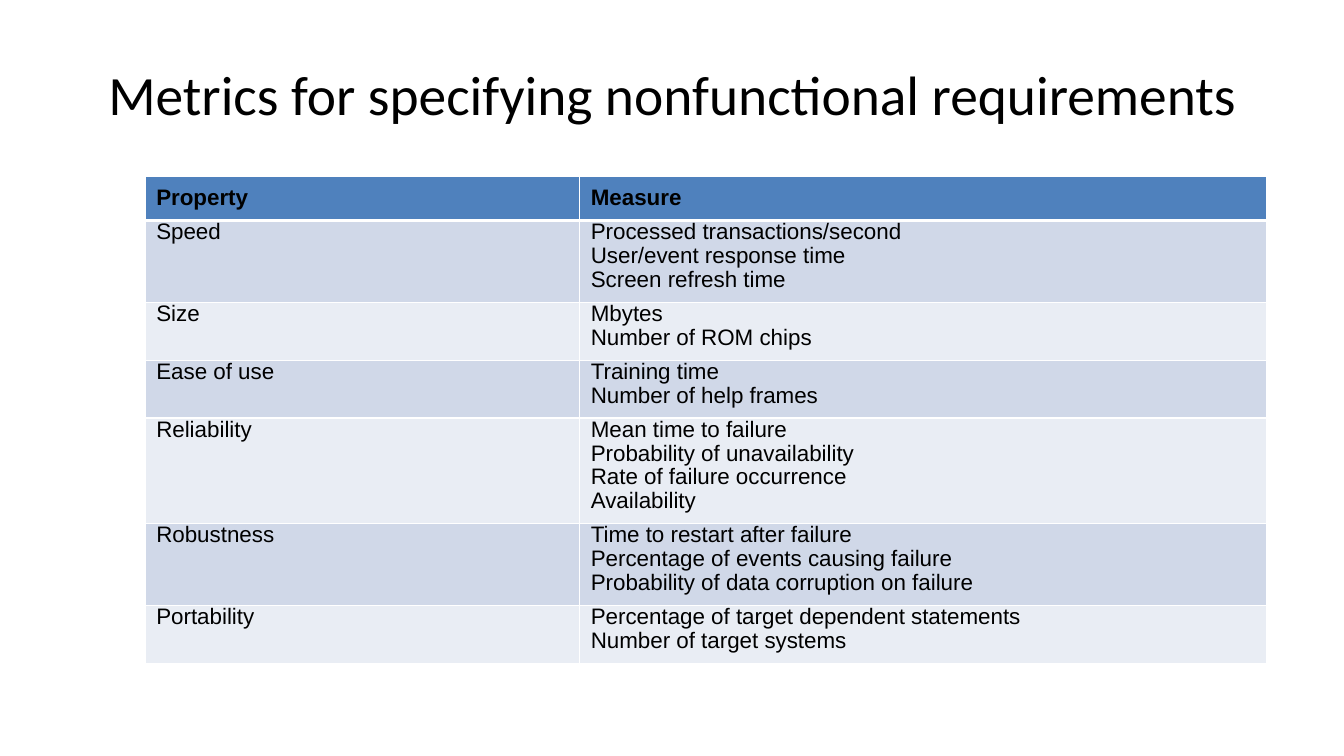
from dataclasses import dataclass

from lxml.etree import SubElement
from pptx import Presentation
from pptx.dml.color import RGBColor
from pptx.enum.text import MSO_ANCHOR, MSO_AUTO_SIZE, PP_ALIGN
from pptx.oxml.ns import qn
from pptx.util import Inches, Pt

TITLE = "Metrics for specifying nonfunctional requirements"
HEADINGS = ("Property", "Measure")
METRICS = [
    ("Speed", ["Processed transactions/second", "User/event response time", "Screen refresh time"]),
    ("Size", ["Mbytes", "Number of ROM chips"]),
    ("Ease of use", ["Training time", "Number of help frames"]),
    ("Reliability", ["Mean time to failure", "Probability of unavailability",
                     "Rate of failure occurrence", "Availability"]),
    ("Robustness", ["Time to restart after failure", "Percentage of events causing failure",
                    "Probability of data corruption on failure"]),
    ("Portability", ["Percentage of target dependent statements", "Number of target systems"]),
]
COLUMN_WIDTHS = (4.31, 6.81)
HEADER_HEIGHT = 0.43
HEIGHT_BY_LINES = {2: 0.53, 3: 0.75, 4: 0.96}


@dataclass(frozen=True)
class Theme:
    text: str = "000000"
    header: str = "4F81BD"
    bands: tuple = ("D0D8E8", "E9EDF4")
    border: str = "FFFFFF"
    title_font: str = "Calibri"
    body_font: str = "Arial"
    title_size: float = 39.6
    body_size: float = 16
    line_spacing: float = 0.96


THEME = Theme()


def write_text(frame, lines, font, size, bold=False, align=PP_ALIGN.JUSTIFY, spacing=None):
    for index, line in enumerate(lines):
        paragraph = frame.add_paragraph() if index else frame.paragraphs[0]
        paragraph.alignment = align
        paragraph.line_spacing = spacing
        run = paragraph.add_run()
        run.text = line
        run.font.name = font
        run.font.size = Pt(size)
        run.font.bold = bold
        run.font.color.rgb = RGBColor.from_string(THEME.text)


def set_borders(cell, widths):
    properties = cell._tc.get_or_add_tcPr()
    for index, (side, width) in enumerate(widths.items()):
        line = SubElement(properties, qn(f"a:ln{side}"), w=str(Pt(width)))
        fill = SubElement(line, qn("a:solidFill"))
        SubElement(fill, qn("a:srgbClr"), val=THEME.border)
        properties.insert(index, line)


def fill_row(table, row, columns, color):
    is_header = row == 0
    for column, lines in enumerate(columns):
        cell = table.cell(row, column)
        cell.fill.solid()
        cell.fill.fore_color.rgb = RGBColor.from_string(color)
        cell.margin_left = cell.margin_right = Inches(0.11)
        cell.margin_top = Inches(0.1 if is_header else 0)
        cell.margin_bottom = Inches(0.1)
        set_borders(cell, {"L": 1, "R": 1, "T": 3 if row == 1 else 1, "B": 3 if is_header else 1})
        align = PP_ALIGN.LEFT if lines == ["Reliability"] else PP_ALIGN.JUSTIFY
        write_text(cell.text_frame, lines, THEME.body_font, THEME.body_size,
                   bold=is_header, align=align, spacing=THEME.line_spacing)


def add_title(slide):
    title = slide.shapes.title
    title.left, title.top = Inches(0.67), Inches(0.3)
    title.width, title.height = Inches(12), Inches(1.25)
    frame = title.text_frame
    frame.word_wrap = True
    frame.auto_size = MSO_AUTO_SIZE.NONE
    frame.vertical_anchor = MSO_ANCHOR.MIDDLE
    write_text(frame, [TITLE], THEME.title_font, THEME.title_size, align=PP_ALIGN.CENTER)


def add_metrics_table(slide):
    heights = [HEADER_HEIGHT] + [HEIGHT_BY_LINES[len(measures)] for _, measures in METRICS]
    table = slide.shapes.add_table(
        len(heights), len(COLUMN_WIDTHS), Inches(1.44), Inches(1.75),
        Inches(sum(COLUMN_WIDTHS)), Inches(sum(heights))).table
    for column, width in zip(table.columns, COLUMN_WIDTHS):
        column.width = Inches(width)
    for row, height in zip(table.rows, heights):
        row.height = Inches(height)
    fill_row(table, 0, [[heading] for heading in HEADINGS], THEME.header)
    for index, (name, measures) in enumerate(METRICS):
        fill_row(table, index + 1, [[name], measures], THEME.bands[index % 2])


def main():
    presentation = Presentation()
    presentation.slide_width, presentation.slide_height = Inches(13.33), Inches(7.5)
    slide = presentation.slides.add_slide(presentation.slide_layouts[5])
    add_title(slide)
    add_metrics_table(slide)
    presentation.save("out.pptx")


if __name__ == "__main__":
    main()
